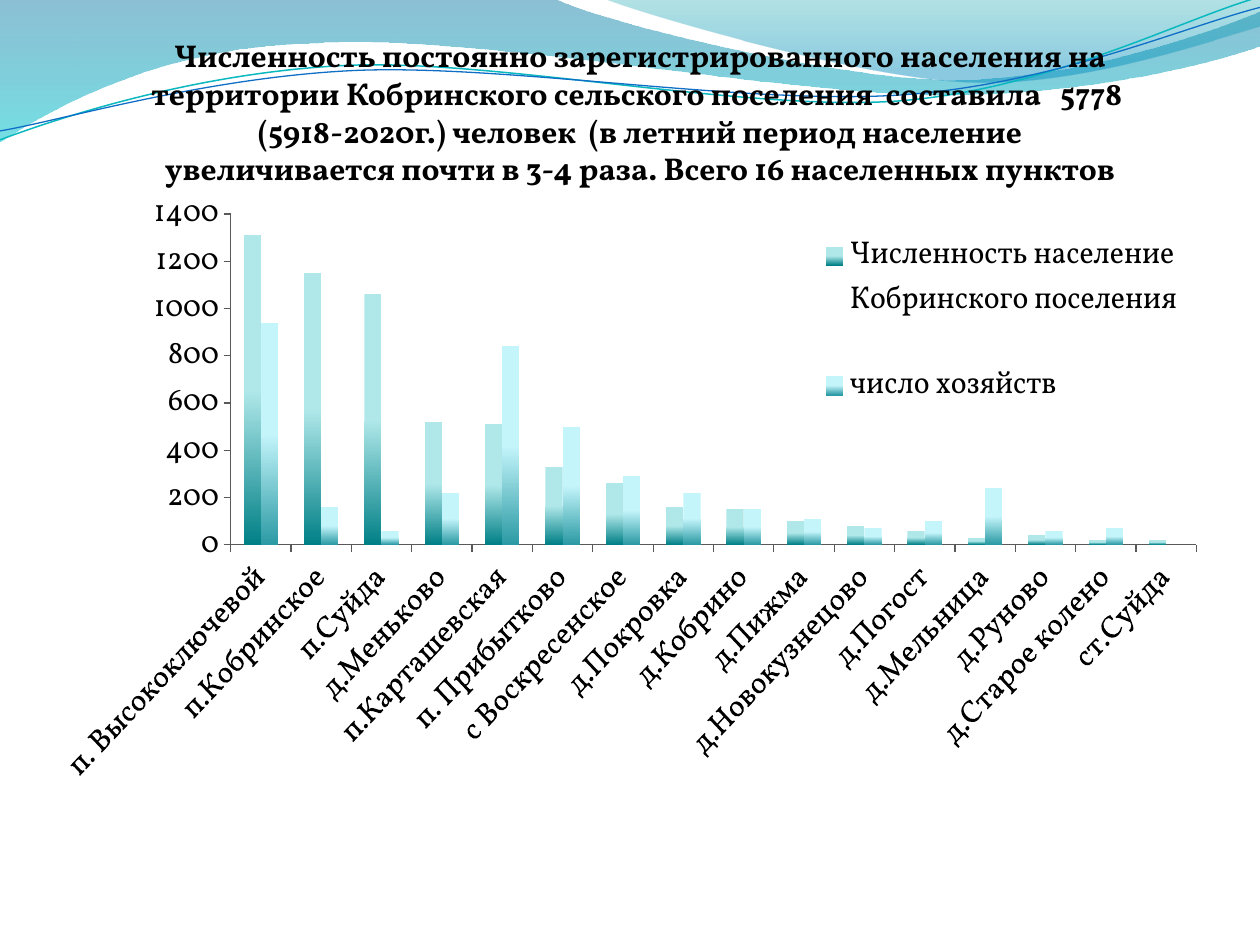
from lxml.etree import SubElement
from pptx import Presentation
from pptx.chart.data import CategoryChartData
from pptx.dml.color import RGBColor
from pptx.enum.chart import XL_CHART_TYPE, XL_LEGEND_POSITION, XL_TICK_MARK
from pptx.enum.text import MSO_AUTO_SIZE, PP_ALIGN
from pptx.oxml import parse_xml
from pptx.oxml.ns import nsdecls, qn
from pptx.util import Cm, Pt

BLACK = RGBColor(0x00, 0x00, 0x00)
AXIS_GRAY = RGBColor(0x59, 0x59, 0x59)
DEEP_BLUE = RGBColor(0x00, 0x74, 0xA1)
CYAN = RGBColor(0x00, 0xC6, 0xCF)
TEAL = RGBColor(0x00, 0xA1, 0xA9)
BLUE = RGBColor(0x00, 0x8B, 0xBF)
LINE_TEAL = RGBColor(0x0A, 0xB8, 0xBF)
LINE_BLUE = RGBColor(0x0F, 0x6F, 0xC6)
PEOPLE_LIGHT = RGBColor(0xB0, 0xE8, 0xEA)
PEOPLE_DARK = RGBColor(0x00, 0x80, 0x86)
HOMES_LIGHT = RGBColor(0xC4, 0xF5, 0xFB)
HOMES_DARK = RGBColor(0x2B, 0x9A, 0xA4)
FONT = "Vollkorn"


def draw_curve(shapes, start, segments, close):
    builder = shapes.build_freeform(Cm(start[0]), Cm(start[1]))
    for segment in segments:
        corners = zip(segment[::2], segment[1::2])
        builder.add_line_segments([(Cm(x), Cm(y)) for x, y in corners], close=False)
    curve = builder.convert_to_shape()
    outline = next(curve.element.iter(qn("a:moveTo"))).getparent()
    lines = iter(outline.findall(qn("a:lnTo")))
    for segment in segments:
        if len(segment) == 2:
            next(lines)
            continue
        bend = next(lines)
        bezier = SubElement(outline, qn("a:cubicBezTo"))
        outline.replace(bend, bezier)
        for line in (bend, next(lines), next(lines)):
            bezier.append(line[0])
            if line is not bend:
                outline.remove(line)
    if close:
        SubElement(outline, qn("a:close"))
    curve.shadow.inherit = False
    return curve


def fill_gradient(fill, stops):
    fill.gradient()
    fill.gradient_angle = 270
    for stop, (position, color) in zip(fill.gradient_stops, stops):
        stop.position = position
        stop.color.rgb = color


presentation = Presentation()
presentation.slide_width = Cm(25.4)
presentation.slide_height = Cm(19.05)
slide = presentation.slides.add_slide(presentation.slide_layouts[6])

waves = [
    ((0, 0),
     [(11.18, -0.03), (12.09, 0.43, 16.87, 1.6, 19.25, 1.6),
      (21.67, 1.6, 24.33, 0.66, 25.4, 0.23), (25.43, 0.91),
      (24.97, 1.12, 22.1, 1.93, 18.95, 1.91), (15.8, 1.91, 9.7, 0.71, 6.53, 0.86),
      (3.28, 0.91, 1.17, 2.11, -0.03, 2.87), (0, 0)],
     [(0, DEEP_BLUE), (1, CYAN)], (45, 55)),
    ((12.17, -0.03),
     [(12.93, 0.28, 17.32, 1.57, 19.53, 1.65),
      (21.74, 1.75, 24.41, 0.81, 25.4, 0.53), (25.4, 0), (12.17, -0.03)],
     [(0, TEAL), (0.8, BLUE)], (30, 45)),
]
for start, segments, stops, opacities in waves:
    wave = draw_curve(slide.shapes, start, segments, True)
    fill_gradient(wave.fill, stops)
    wave.line.fill.background()
    for color, opacity in zip(wave.element.iter(qn("a:srgbClr")), opacities):
        SubElement(color, qn("a:alpha")).set("val", str(opacity * 1000))

ribbons = [
    ((-0.05, 2.22),
     [(1.19, 1.82, 4.02, 1.04, 7.05, 1.05), (10.05, 1.07, 15.02, 2.37, 18.08, 2.29),
      (21.13, 2.2, 23.87, 0.91, 25.41, 0.55)], LINE_TEAL, 0.85),
    ((-0.04, 2.04),
     [(1.16, 1.9, 4.18, 1.15, 7.2, 1.16), (10.25, 1.18, 15.13, 2.25, 18.18, 2.17),
      (21.21, 2.1, 23.93, 1.06, 25.45, 0.75)], LINE_BLUE, 0.75),
]
ribbon_group = slide.shapes.add_group_shape()
for start, segments, color, width in ribbons:
    ribbon = draw_curve(ribbon_group.shapes, start, segments, False)
    ribbon.rotation = 357.3
    ribbon.fill.background()
    ribbon.line.color.rgb = color
    ribbon.line.width = Pt(width)

settlements = [
    ("п. Высокоключевой", 1310, 940), ("п.Кобринское", 1150, 160),
    ("п.Суйда", 1060, 60), ("д.Меньково", 520, 220),
    ("п.Карташевская", 510, 840), ("п. Прибытково", 330, 500),
    ("с Воскресенское", 260, 290), ("д.Покровка", 160, 220),
    ("д.Кобрино", 150, 150), ("д.Пижма", 100, 110),
    ("д.Новокузнецово", 80, 70), ("д.Погост", 60, 100),
    ("д.Мельница", 30, 240), ("д.Руново", 40, 60),
    ("д.Старое колено", 20, 70), ("ст.Суйда", 20, 0),
]
names, people, homes = zip(*settlements)
population = CategoryChartData()
population.categories = names
population.add_series("Численность население  Кобринского поселения", people)
population.add_series("число хозяйств", homes)
chart = slide.shapes.add_chart(
    XL_CHART_TYPE.COLUMN_CLUSTERED, Cm(1.19), Cm(3.76), Cm(22.94), Cm(13.89), population
).chart
chart.has_title = False
chart.font.size = Pt(18)
chart.font.name = FONT
chart.font.color.rgb = BLACK

plot = chart.plots[0]
plot.vary_by_categories = False
plot.gap_width = 150
plot.overlap = 0
shades = [(PEOPLE_LIGHT, PEOPLE_DARK), (HOMES_LIGHT, HOMES_DARK)]
for series, (light, dark) in zip(plot.series, shades):
    fill_gradient(series.format.fill, [(0.5, light), (1, dark)])
    series.format.line.fill.background()

for axis in (chart.category_axis, chart.value_axis):
    axis.has_major_gridlines = False
    axis.major_tick_mark = XL_TICK_MARK.OUTSIDE
    axis.minor_tick_mark = XL_TICK_MARK.NONE
    axis.format.line.color.rgb = AXIS_GRAY
    axis.tick_labels.font.size = Pt(18)
    axis.tick_labels.font.name = FONT
    axis.tick_labels.font.color.rgb = BLACK
chart.value_axis.minimum_scale = 0
chart.value_axis.maximum_scale = 1400
chart.value_axis.major_unit = 200
category_text = chart.category_axis._element.find(qn("c:txPr"))
category_text.find(qn("a:bodyPr")).set("rot", "-2700000")

chart.has_legend = True
legend = chart.legend
legend.position = XL_LEGEND_POSITION.RIGHT
legend.include_in_layout = False
legend.font.size = Pt(18)
legend.font.name = FONT
legend.font.color.rgb = BLACK

plot_area = chart._chartSpace.chart.plotArea
for part, target, bounds in [
    (plot_area, '<c:layoutTarget val="inner"/>', (0.1, 0.04, 0.9, 0.48)),
    (legend._element, "", (0.66, 0.01, 0.34, 0.37)),
]:
    for old_layout in part.findall(qn("c:layout")):
        part.remove(old_layout)
    x, y, width, height = bounds
    layout = parse_xml(
        f'<c:layout {nsdecls("c")}><c:manualLayout>{target}'
        '<c:xMode val="edge"/><c:yMode val="edge"/>'
        f'<c:x val="{x}"/><c:y val="{y}"/><c:w val="{width}"/><c:h val="{height}"/>'
        "</c:manualLayout></c:layout>"
    )
    part.insert(0 if target else 1, layout)

title = slide.shapes.add_textbox(Cm(2.58), Cm(0.6), Cm(20.65), Cm(3.33)).text_frame
title.word_wrap = True
title.auto_size = MSO_AUTO_SIZE.SHAPE_TO_FIT_TEXT
paragraph = title.paragraphs[0]
paragraph.alignment = PP_ALIGN.CENTER
run = paragraph.add_run()
run.text = (
    "Численность постоянно зарегистрированного населения на территории "
    "Кобринского сельского поселения  составила   5778  (5918-2020г.) человек  "
    "(в летний период население увеличивается почти в 3-4 раза. "
    "Всего 16 населенных пунктов"
)
run.font.size = Pt(18)
run.font.name = FONT
run.font.bold = True
run.font.color.rgb = BLACK

presentation.save("out.pptx")
